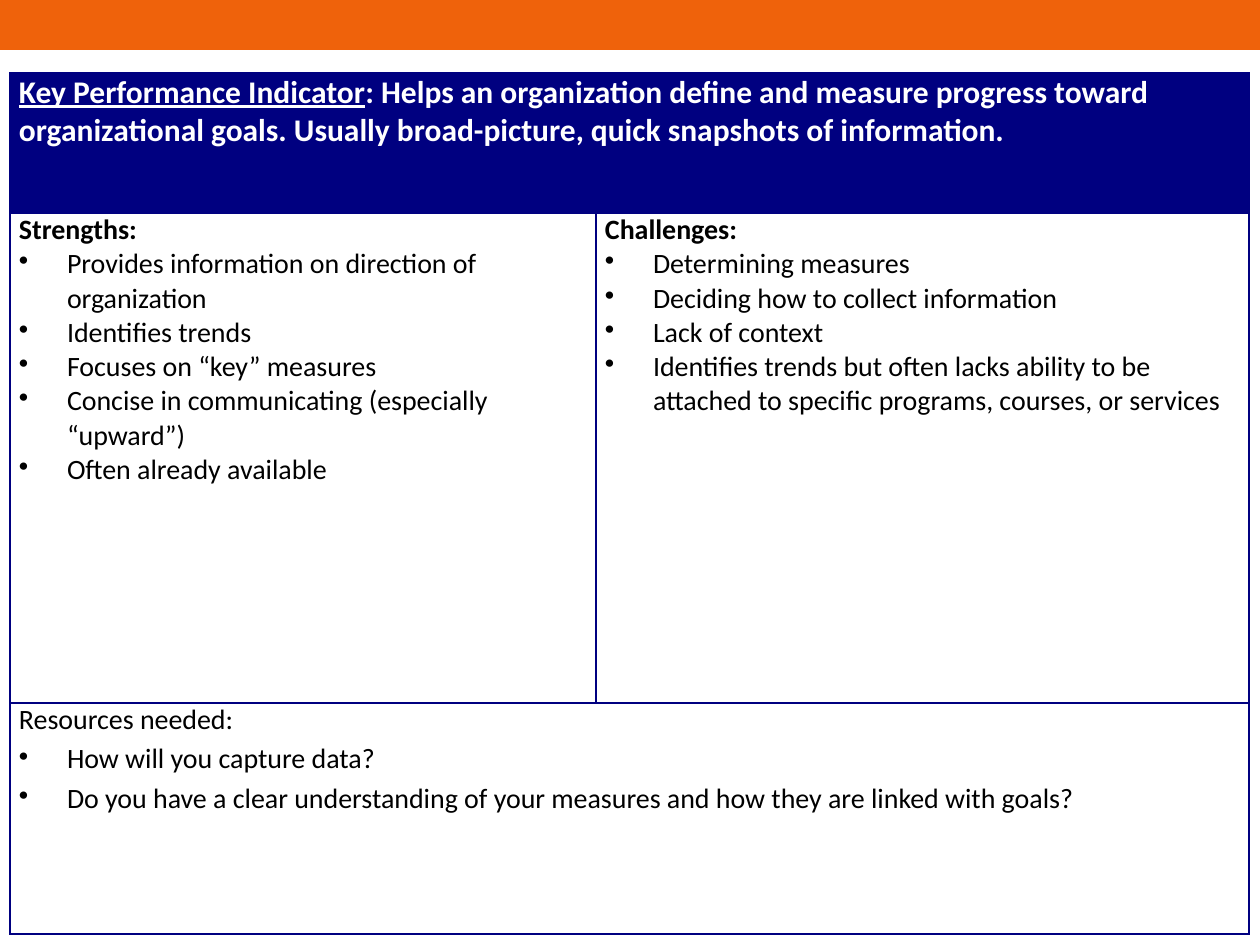
from lxml import etree
from pptx import Presentation
from pptx.dml.color import RGBColor
from pptx.enum.shapes import MSO_SHAPE
from pptx.oxml.ns import qn
from pptx.util import Emu, Pt

PX = 914400 / 126
RECTANGLE = MSO_SHAPE.RECTANGLE
FONT = "Calibri"
ORANGE = RGBColor(0xEF, 0x62, 0x0B)
NAVY = RGBColor(0x00, 0x00, 0x80)
WHITE = RGBColor(0xFF, 0xFF, 0xFF)
BLACK = RGBColor(0x00, 0x00, 0x00)

COLUMN_WIDTHS = [586, 653]
ROW_HEIGHTS = [140, 490, 231]
CELL_MARGIN = 9
BULLET_INDENT = 48

TERM = "Key Performance Indicator"
DEFINITION = (": Helps an organization define and measure progress toward organizational goals. "
              "Usually broad-picture, quick snapshots of information.")
STRENGTHS = [
    "Provides information on direction of organization",
    "Identifies trends",
    "Focuses on “key” measures",
    "Concise in communicating (especially “upward”)",
    "Often already available",
]
CHALLENGES = [
    "Determining measures",
    "Deciding how to collect information",
    "Lack of context",
    "Identifies trends but often lacks ability to be attached to specific programs, "
    "courses, or services",
]
RESOURCES = [
    "How will you capture data?",
    "Do you have a clear understanding of your measures and how they are linked with goals?",
]


def px(length):
    return Emu(round(length * PX))


def add_run(paragraph, text, size=16, color=BLACK, bold=False, underline=False):
    run = paragraph.add_run()
    run.text = text
    font = run.font
    font.name, font.size, font.bold, font.underline = FONT, Pt(size), bold, underline
    font.color.rgb = color


def make_bullet(paragraph):
    properties = paragraph._p.get_or_add_pPr()
    properties.set("marL", str(px(BULLET_INDENT)))
    properties.set("indent", str(-px(BULLET_INDENT)))
    etree.SubElement(properties, qn("a:buChar"), char="•")


def fill_section(cell, heading, items, bold=True, item_spacing=1.0):
    """Write a heading followed by a bulleted list."""
    frame = cell.text_frame
    add_run(frame.paragraphs[0], heading, bold=bold)
    for item in items:
        paragraph = frame.add_paragraph()
        paragraph.line_spacing = item_spacing
        make_bullet(paragraph)
        add_run(paragraph, item)


def style_cell(cell, fill_color):
    cell.margin_left = cell.margin_right = px(CELL_MARGIN)
    cell.margin_top = cell.margin_bottom = 0
    properties = cell._tc.get_or_add_tcPr()
    for side in ("lnL", "lnR", "lnT", "lnB"):
        border = etree.SubElement(properties, qn(f"a:{side}"), w=str(Pt(1)))
        border_fill = etree.SubElement(border, qn("a:solidFill"))
        etree.SubElement(border_fill, qn("a:srgbClr"), val=str(NAVY))
    cell.fill.solid()
    cell.fill.fore_color.rgb = fill_color


def add_top_band(slide):
    band = slide.shapes.add_shape(RECTANGLE, 0, 0, px(1260), px(50))
    band.shadow.inherit = False
    band.fill.solid()
    band.fill.fore_color.rgb = ORANGE
    band.line.fill.background()


def add_indicator_table(slide):
    table = slide.shapes.add_table(
        len(ROW_HEIGHTS), len(COLUMN_WIDTHS), px(10), px(73),
        px(sum(COLUMN_WIDTHS)), px(sum(ROW_HEIGHTS))).table
    table.first_row = table.horz_banding = False
    for column, width in zip(table.columns, COLUMN_WIDTHS):
        column.width = px(width)
    for row_index, (row, height) in enumerate(zip(table.rows, ROW_HEIGHTS)):
        row.height = px(height)
        for cell in row.cells:
            style_cell(cell, NAVY if row_index == 0 else WHITE)
    for row_index in (0, 2):
        table.cell(row_index, 0).merge(table.cell(row_index, 1))

    definition = table.cell(0, 0).text_frame.paragraphs[0]
    add_run(definition, TERM, 18, WHITE, bold=True, underline=True)
    add_run(definition, DEFINITION, 18, WHITE, bold=True)
    fill_section(table.cell(1, 0), "Strengths:", STRENGTHS)
    fill_section(table.cell(1, 1), "Challenges:", CHALLENGES)
    fill_section(table.cell(2, 0), "Resources needed:", RESOURCES, bold=False, item_spacing=1.15)


def main():
    presentation = Presentation()
    presentation.slide_width, presentation.slide_height = px(1260), px(945)
    slide = presentation.slides.add_slide(presentation.slide_layouts[6])
    add_top_band(slide)
    add_indicator_table(slide)
    presentation.save("out.pptx")


if __name__ == "__main__":
    main()
